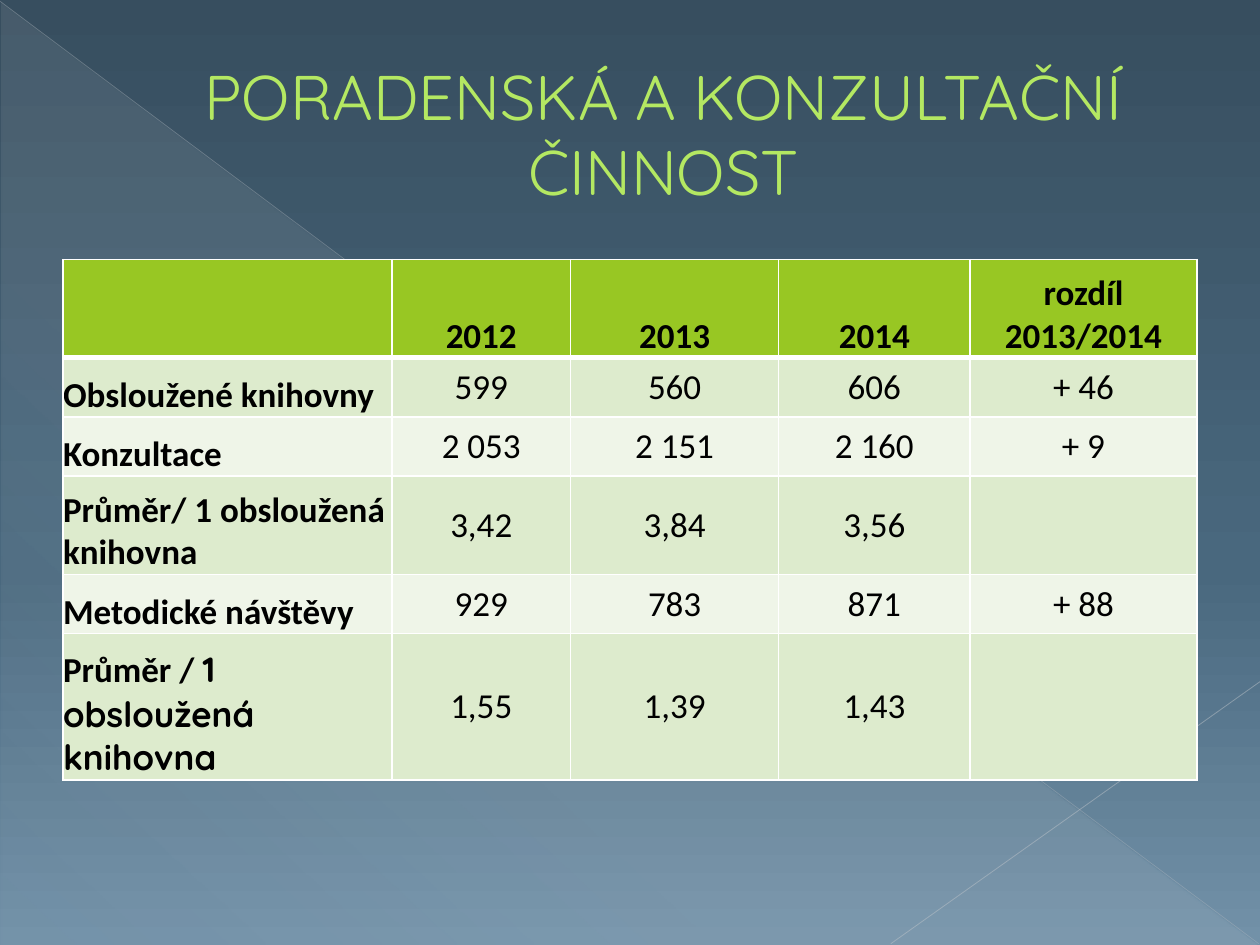
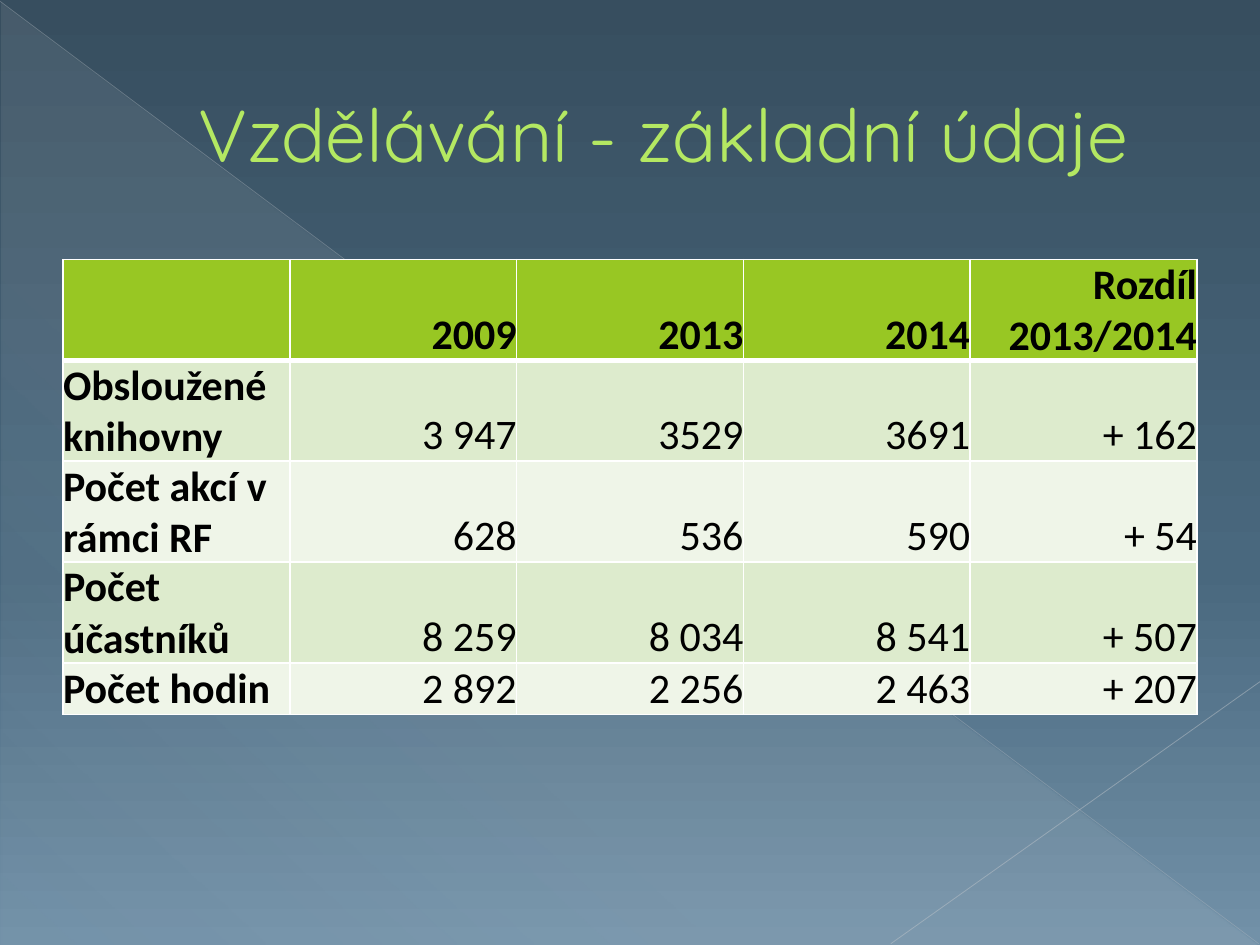
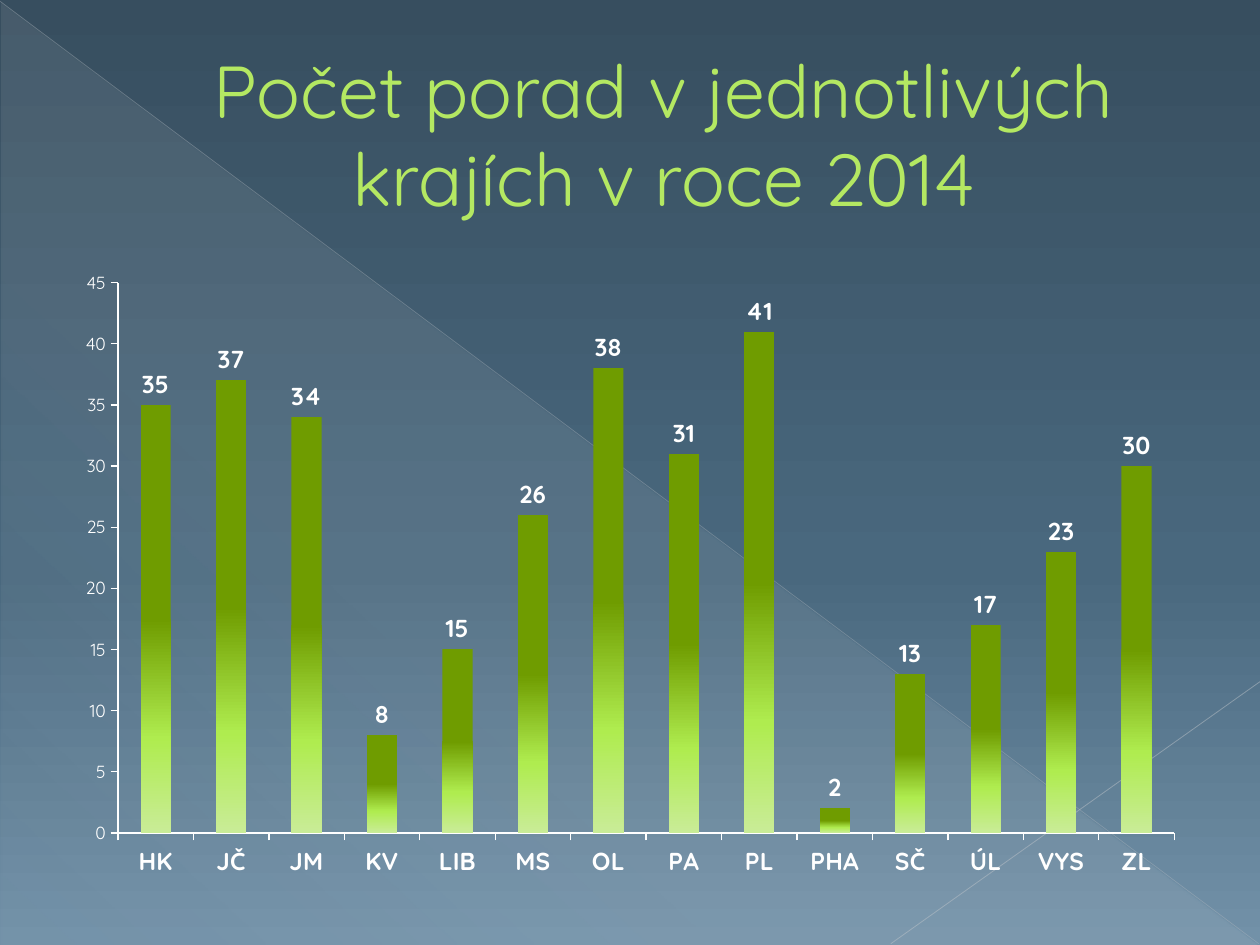
"""Build three slides on library consulting, training and regional meetings."""
from dataclasses import dataclass

from lxml.etree import SubElement
from pptx import Presentation
from pptx.chart.data import CategoryChartData
from pptx.dml.color import RGBColor
from pptx.enum.chart import XL_CHART_TYPE as ChartType, XL_LABEL_POSITION as LabelPosition
from pptx.enum.chart import XL_TICK_MARK as TickMark
from pptx.enum.shapes import MSO_CONNECTOR as Connector, MSO_SHAPE as Shape
from pptx.enum.text import MSO_ANCHOR as Anchor, PP_ALIGN as Align
from pptx.oxml.ns import qn
from pptx.util import Inches, Pt


@dataclass(frozen=True)
class Theme:
    heading_font: str = "Quicksand"
    table_font: str = "Calibri"
    title: str = "B4E862"
    title_outline: str = "698A18"
    header: str = "98C723"
    bands: tuple = ("EFF5E8", "DDEBCD")
    ink: str = "000000"
    white: str = "FFFFFF"
    backdrop: tuple = ((0, "374E5F", 100), (60, "49687E", 100), (100, "7291A8", 100))
    veil: tuple = ((0, "E7ECED", 10), (70, "E7ECED", 8), (100, "E7ECED", 1))
    bars: tuple = ((0, "6F9C00", 100), (50, "6F9C00", 100),
                   (78, "AFEC4F", 100), (100, "C9EC97", 100))
    axis_size: int = 10
    label_size: int = 14


theme = Theme()
UNIT = Inches(0.1)
COLUMNS, ROWS = 100, 75
LEFT, WIDTH = 5 * UNIT, 90 * UNIT
TITLE_TOP, TITLE_HEIGHT = int(2.9 * UNIT), int(15.3 * UNIT)
BODY_TOP, BODY_HEIGHT = int(20.6 * UNIT), 50 * UNIT
DIAGONALS = (
    ((0, 0.1), (99.9, 74.9), "BAC0C6", 0.39, 35),
    ((100, 54.1), (70.7, 74.9), "C2C7CC", 0.47, 45),
)
TITLES = (
    ("PORADENSKÁ A KONZULTAČNÍ ČINNOST", 36),
    ("Vzdělávání - základní údaje", 42),
    ("Počet porad v jednotlivých krajích v roce 2014", 42),
)


def write(frame, text, size, color, font=theme.table_font, bold=False,
          align=Align.LEFT, outline=None):
    """Append a formatted run to the first paragraph of a text frame."""
    paragraph = frame.paragraphs[0]
    paragraph.alignment = align
    run = paragraph.add_run()
    run.text = text
    run.font.name, run.font.size, run.font.bold = font, Pt(size), bold
    run.font.color.rgb = RGBColor.from_string(color)
    if outline:
        properties = run.font.color and paragraph.runs[-1]._r.get_or_add_rPr()
        line = SubElement(properties, qn("a:ln"), w=str(Pt(0.5)))
        SubElement(SubElement(line, qn("a:solidFill")), qn("a:srgbClr"), val=outline)
        properties.insert(0, line)


def paint_gradient(fill, element, stops, angle):
    """Give a fill inside an element stops of position, colour and opacity."""
    fill.gradient()
    gradient = next(element.iter(qn("a:gradFill")))
    gradient.clear()
    stop_list = SubElement(gradient, qn("a:gsLst"))
    for position, color, opacity in stops:
        stop = SubElement(stop_list, qn("a:gs"), pos=str(position * 1000))
        tint = SubElement(stop, qn("a:srgbClr"), val=color)
        SubElement(tint, qn("a:alpha"), val=str(opacity * 1000))
    SubElement(gradient, qn("a:lin"), ang=str(angle * 60000), scaled="0")


presentation = Presentation()
presentation.slide_width, presentation.slide_height = COLUMNS * UNIT, ROWS * UNIT
master = presentation.slide_master
paint_gradient(master.background.fill, master.element, theme.backdrop, 90)

slides = []
for title, title_size in TITLES:
    slide = presentation.slides.add_slide(presentation.slide_layouts[6])
    slides.append(slide)
    triangle = slide.shapes.add_shape(
        Shape.RIGHT_TRIANGLE, *(int(n * UNIT) for n in (0.1, 0.2, 99.8, 74.8)))
    triangle.shadow.inherit = False
    triangle.line.fill.background()
    paint_gradient(triangle.fill, triangle.element, theme.veil, 133)
    for start, end, color, weight, opacity in DIAGONALS:
        diagonal = slide.shapes.add_connector(
            Connector.STRAIGHT, *(int(n * UNIT) for n in start + end))
        diagonal.line.width = Pt(weight)
        diagonal.line.color.rgb = RGBColor.from_string(color)
        tint = next(diagonal.element.spPr.iter(qn("a:srgbClr")))
        SubElement(tint, qn("a:alpha"), val=str(opacity * 1000))
        SubElement(diagonal.element.spPr, qn("a:effectLst"))
    frame = slide.shapes.add_textbox(LEFT, TITLE_TOP, WIDTH, TITLE_HEIGHT).text_frame
    frame.word_wrap = True
    frame.vertical_anchor = Anchor.MIDDLE
    frame.margin_left = Inches(0.63)
    write(frame, title, title_size, theme.title, font=theme.heading_font,
          align=Align.CENTER, outline=theme.title_outline)

consulting = (
    ("", "2012", "2013", "2014", "rozdíl 2013/2014"),
    ("Obsloužené knihovny", "599", "560", "606", "+ 46"),
    ("Konzultace", "2 053", "2 151", "2 160", "+ 9"),
    ("Průměr/ 1 obsloužená knihovna", "3,42", "3,84", "3,56", ""),
    ("Metodické návštěvy", "929", "783", "871", "+ 88"),
    ("Průměr / |1 obsloužená knihovna", "1,55", "1,39", "1,43", ""),
)
training = (
    ("", "2009", "2013", "2014", "Rozdíl 2013/2014"),
    ("Obsloužené knihovny", "3 947", "3529", "3691", "+ 162"),
    ("Počet akcí v rámci RF", "628", "536", "590", "+ 54"),
    ("Počet účastníků", "8 259", "8 034", "8 541", "+ 507"),
    ("Počet hodin", "2 892", "2 256", "2 463", "+ 207"),
)
tables = (
    (consulting, (26.1, 14.2, 16.5, 15.2, 18), (7.8, 4.7, 4.7, 7.8, 4.7, 11.6),
     20, Align.CENTER, Anchor.MIDDLE),
    (training, (18,) * 5, (4.1,) * 5, 24, Align.RIGHT, Anchor.BOTTOM),
)
for slide, (records, widths, heights, size, align, anchor) in zip(slides, tables):
    table = slide.shapes.add_table(len(records), len(widths), LEFT, BODY_TOP, WIDTH,
                                   int(sum(heights) * UNIT)).table
    for column, width in zip(table.columns, widths):
        column.width = int(width * UNIT)
    for row, (record, height) in enumerate(zip(records, heights)):
        table.rows[row].height = int(height * UNIT)
        for column, text in enumerate(record):
            cell = table.cell(row, column)
            cell.fill.solid()
            cell.fill.fore_color.rgb = RGBColor.from_string(
                theme.bands[row % 2] if row else theme.header)
            properties = cell._tc.get_or_add_tcPr()
            for order, side in enumerate("LRTB"):
                heavy = (row, side) in ((0, "B"), (1, "T"))
                border = SubElement(properties, qn(f"a:ln{side}"), w=str(Pt(3 if heavy else 1)))
                SubElement(SubElement(border, qn("a:solidFill")), qn("a:srgbClr"),
                           val=theme.white)
                properties.insert(order, border)
            if not text:
                continue
            cell.margin_left = cell.margin_right = cell.margin_top = cell.margin_bottom = 0
            cell.vertical_anchor = anchor if row and column else Anchor.BOTTOM
            for part, font in zip(text.split("|"), (theme.table_font, theme.heading_font)):
                write(cell.text_frame, part, size, theme.ink, font=font,
                      bold=not (row and column), align=align if column else Align.LEFT)

meetings = {"HK": 35, "JČ": 37, "JM": 34, "KV": 8, "LIB": 15, "MS": 26, "OL": 38,
            "PA": 31, "PL": 41, "PHA": 2, "SČ": 13, "ÚL": 17, "VYS": 23, "ZL": 30}
chart_data = CategoryChartData()
chart_data.categories = list(meetings)
chart_data.add_series("Series 1", list(meetings.values()))
chart = slides[2].shapes.add_chart(
    ChartType.COLUMN_CLUSTERED, LEFT, BODY_TOP, WIDTH, BODY_HEIGHT, chart_data).chart
chart.has_title = chart.has_legend = False
chart.font.name, chart.font.size = theme.heading_font, Pt(theme.axis_size)
chart.font.color.rgb = RGBColor.from_string(theme.white)
for axis in (chart.category_axis, chart.value_axis):
    axis.has_major_gridlines = False
    axis.major_tick_mark = TickMark.OUTSIDE
    axis.format.line.width = Pt(0.75)
    axis.format.line.color.rgb = RGBColor.from_string(theme.white)
chart.value_axis.minimum_scale, chart.value_axis.maximum_scale = 0, 45
chart.value_axis.major_unit = 5
plot = chart.plots[0]
plot.gap_width = 150
plot.vary_by_categories = False
plot.has_data_labels = True
plot.data_labels.show_value = True
plot.data_labels.position = LabelPosition.OUTSIDE_END
for font in (plot.data_labels.font, chart.category_axis.tick_labels.font):
    font.name, font.size, font.bold = theme.heading_font, Pt(theme.label_size), True
    font.color.rgb = RGBColor.from_string(theme.white)
paint_gradient(plot.series[0].format.fill, chart.element, theme.bars, 90)

presentation.save("out.pptx")
